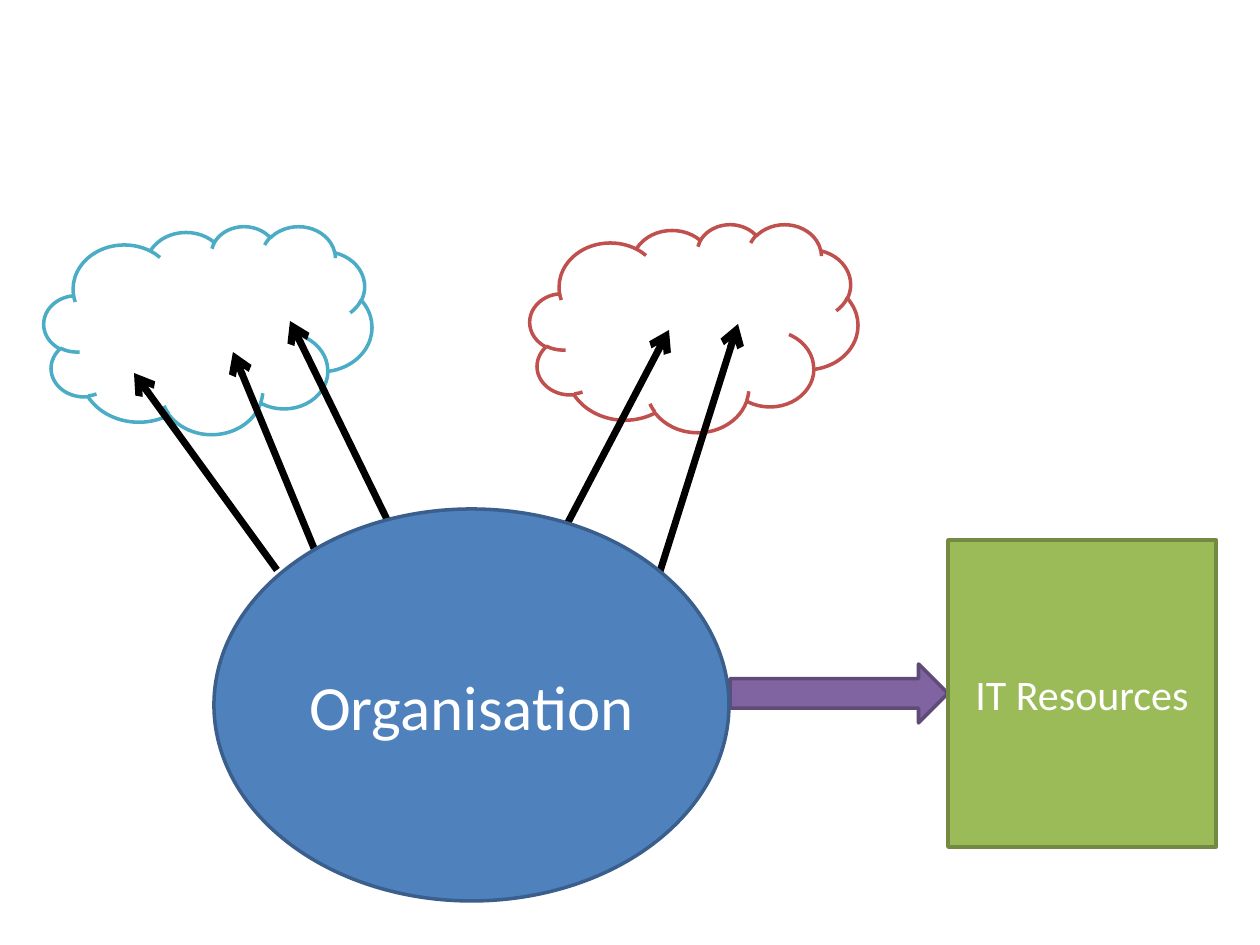
from typing import NamedTuple

from lxml import etree
from pptx import Presentation
from pptx import util as u
from pptx.dml.color import RGBColor
from pptx.enum import shapes, text
from pptx.oxml.ns import qn

PX = 914400 / 126
COLORS = {
    "white": "FFFFFF", "black": "000000",
    "purple": "8064A2", "dark purple": "5F4A78",
    "green": "9BBB59", "dark green": "738A42",
    "blue": "4F81BD", "dark blue": "3A5F8C",
    "aqua": "4BACC6", "red": "C0504D",
}
KIND = shapes.MSO_SHAPE


class Block(NamedTuple):
    kind: shapes.MSO_SHAPE
    left: int
    top: int
    width: int
    height: int
    fill: str
    outline: str
    label: str = ""
    size: int = 24


class Arrow(NamedTuple):
    x1: int
    y1: int
    x2: int
    y2: int


RESOURCE_BLOCKS = [
    Block(KIND.RIGHT_ARROW, 730, 664, 218, 59, "purple", "dark purple"),
    Block(KIND.RECTANGLE, 948, 540, 268, 307, "green", "dark green", "IT Resources"),
]
CLOUDS = [
    Block(KIND.CLOUD, 44, 226, 328, 208, "white", "aqua"),
    Block(KIND.CLOUD, 530, 224, 328, 208, "white", "red"),
]
CLOUD_ARROWS = [
    Arrow(323, 570, 233, 352),
    Arrow(532, 591, 669, 330),
    Arrow(422, 591, 290, 321),
    Arrow(640, 635, 738, 324),
    Arrow(277, 570, 134, 373),
]
ORGANISATION = Block(KIND.OVAL, 214, 509, 515, 392, "blue", "dark blue", "Organisation", 36)


def px(length: int) -> u.Emu:
    return u.Emu(round(length * PX))


def color(name: str) -> RGBColor:
    return RGBColor.from_string(COLORS[name])


def draw_block(page, block: Block) -> None:
    shape = page.shapes.add_shape(
        block.kind, px(block.left), px(block.top), px(block.width), px(block.height))
    shape.shadow.inherit = False
    shape.fill.solid()
    shape.fill.fore_color.rgb = color(block.fill)
    shape.line.color.rgb = color(block.outline)
    shape.line.width = u.Pt(2)
    if block.label:
        frame = shape.text_frame
        frame.vertical_anchor = text.MSO_ANCHOR.MIDDLE
        para = frame.paragraphs[0]
        para.text = block.label
        para.alignment = text.PP_ALIGN.CENTER
        para.font.name = "Calibri"
        para.font.size = u.Pt(block.size)
        para.font.color.rgb = color("white")


def draw_arrow(page, arrow: Arrow) -> None:
    line = page.shapes.add_connector(
        shapes.MSO_CONNECTOR.STRAIGHT,
        px(arrow.x1), px(arrow.y1), px(arrow.x2), px(arrow.y2))
    line.line.color.rgb = color("black")
    line.line.width = u.Pt(4)
    properties = line._element.spPr
    etree.SubElement(properties.find(qn("a:ln")), qn("a:tailEnd"), type="arrow")
    etree.SubElement(properties, qn("a:effectLst"))


def main() -> None:
    deck = Presentation()
    deck.slide_width, deck.slide_height = px(1260), px(945)
    page = deck.slides.add_slide(deck.slide_layouts.get_by_name("Blank"))
    for block in RESOURCE_BLOCKS + CLOUDS:
        draw_block(page, block)
    for arrow in CLOUD_ARROWS:
        draw_arrow(page, arrow)
    draw_block(page, ORGANISATION)
    deck.save("out.pptx")


if __name__ == "__main__":
    main()
